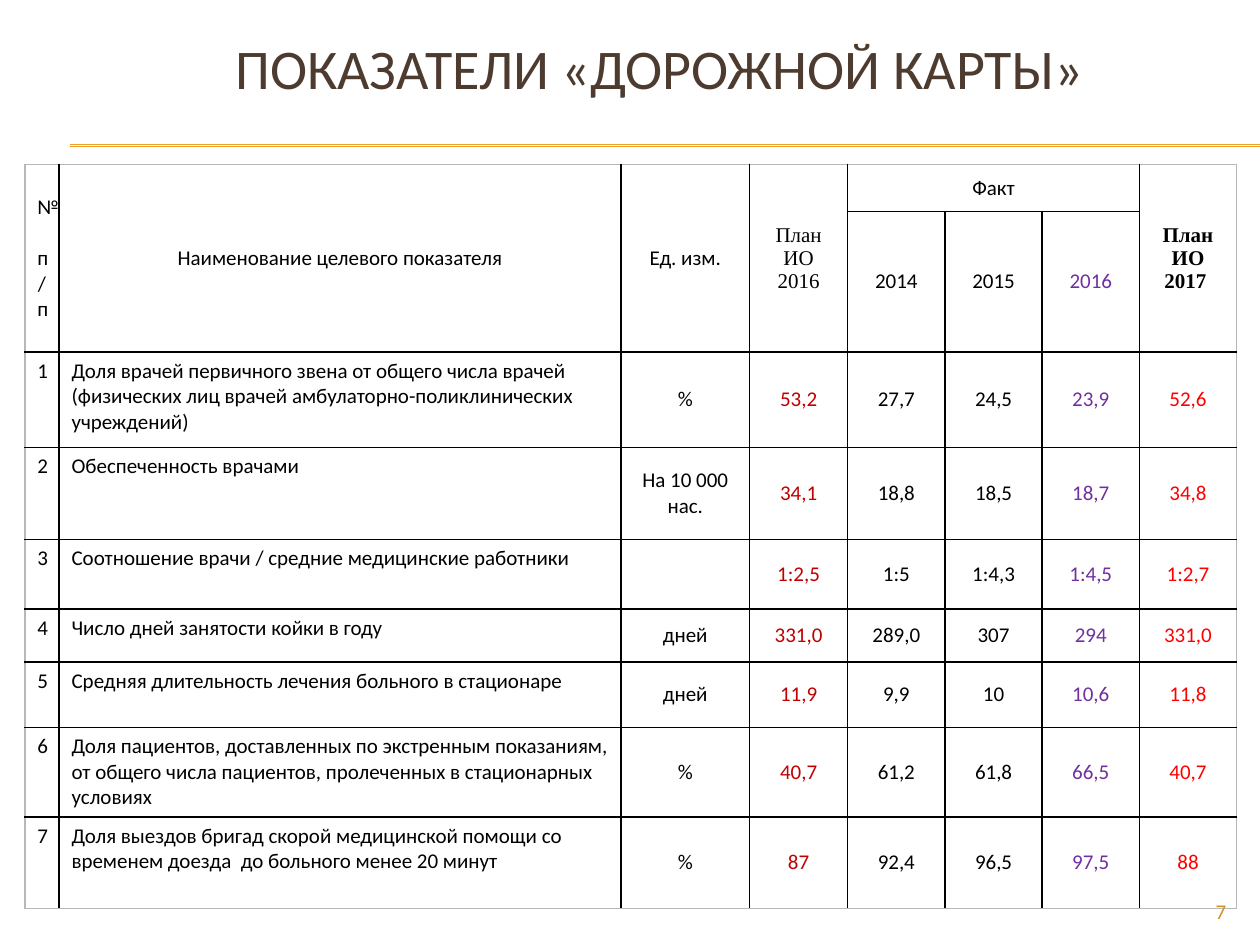
"""Builds the slide with the road map indicators table."""
import pptx
import pptx.util
import pptx.dml.color
import pptx.enum.shapes
import pptx.enum.text
import pptx.oxml
import pptx.oxml.ns
from lxml import etree

Cm, Pt = pptx.util.Cm, pptx.util.Pt
ALIGN, ANCHOR = pptx.enum.text.PP_ALIGN, pptx.enum.text.MSO_ANCHOR

COLORS = {
    "title": "4E3B30", "rule": "F0A22E", "number": "D48F29", "text": "000000",
    "plan": "C00000", "current": "7030A0", "next": "FF0000", "frame": "B8B8B8",
}
TITLE = "ПОКАЗАТЕЛИ «ДОРОЖНОЙ КАРТЫ»"
PAGE = "7"
HEADINGS = [
    ["№ п/п", "Наименование целевого показателя", "Ед. изм.", "План ИО 2016",
     "Факт", "", "", "План ИО 2017 "],
    ["", "", "", "", "2014", "2015", "2016", ""],
]
INDICATORS = [
    ["Доля врачей первичного звена от общего числа врачей (физических лиц врачей "
     "амбулаторно-поликлинических учреждений)",
     "%", "53,2", "27,7", "24,5", "23,9", "52,6"],
    ["Обеспеченность врачами", "На 10 000 нас.", "34,1", "18,8", "18,5", "18,7", "34,8"],
    ["Соотношение врачи / средние медицинские работники",
     "", "1:2,5", "1:5", "1:4,3", "1:4,5", "1:2,7"],
    ["Число дней занятости койки в году", "дней", "331,0", "289,0", "307", "294", "331,0"],
    ["Средняя длительность лечения больного в стационаре",
     "дней", "11,9", "9,9", "10", "10,6", "11,8"],
    ["Доля пациентов, доставленных по экстренным показаниям, от общего числа "
     "пациентов, пролеченных в стационарных условиях",
     "%", "40,7", "61,2", "61,8", "66,5", "40,7"],
    ["Доля выездов бригад скорой медицинской помощи со временем доезда  до больного "
     "менее 20 минут", "%", "87", "92,4", "96,5", "97,5", "88"],
]
WIDTHS = [0.69, 11.33, 2.59, 1.98] + [1.96] * 4
HEIGHTS = [0.94, 1.55, 1.93, 1.85, 1.4, 1.07, 1.32, 1.6, 1.85]
MERGES = [((0, col), (1, col)) for col in (0, 1, 2, 3, 7)] + [((0, 4), (0, 6))]
NUMBER, NAME, PLAN, CURRENT, NEXT = 0, 1, 3, 6, 7
VALUE_COLORS = {PLAN: "plan", CURRENT: "current", NEXT: "next"}


def rgb(name):
    return pptx.dml.color.RGBColor.from_string(COLORS[name])


def write(frame, text, size, color, align, font="Calibri", bold=False):
    frame.word_wrap = True
    paragraph = frame.paragraphs[0]
    paragraph.text = text
    paragraph.alignment = align
    paragraph.font.size = Pt(size)
    paragraph.font.name = font
    paragraph.font.bold = bold
    paragraph.font.color.rgb = rgb(color)


def set_borders(cell, outer):
    properties = cell._tc.get_or_add_tcPr()
    for position, side in enumerate(("lnL", "lnR", "lnT", "lnB")):
        color = COLORS["frame" if side in outer else "text"]
        properties.insert(position, pptx.oxml.parse_xml(
            f'<a:{side} {pptx.oxml.ns.nsdecls("a")} w="12700"><a:solidFill>'
            f'<a:srgbClr val="{color}"/></a:solidFill></a:{side}>'))


def add_rule(slide, left, right, top):
    rule = slide.shapes.add_connector(
        pptx.enum.shapes.MSO_CONNECTOR.STRAIGHT, Cm(left), Cm(top), Cm(right), Cm(top))
    rule.line.color.rgb = rgb("rule")
    rule.line.width = Pt(0.75)
    etree.SubElement(rule._element.spPr, pptx.oxml.ns.qn("a:effectLst"))


def add_indicators(slide):
    rows = HEADINGS + [[str(n), *row] for n, row in enumerate(INDICATORS, 1)]
    table = slide.shapes.add_table(
        len(rows), len(WIDTHS), Cm(0.5), Cm(3.32), Cm(sum(WIDTHS)), Cm(sum(HEIGHTS))).table
    table.first_row = table.horz_banding = False
    for column, width in zip(table.columns, WIDTHS):
        column.width = Cm(width)
    for row, height in zip(table.rows, HEIGHTS):
        row.height = Cm(height)
    for start, end in MERGES:
        table.cell(*start).merge(table.cell(*end))
    for r, texts in enumerate(rows):
        heading = r < len(HEADINGS)
        for c, text in enumerate(texts):
            cell = table.cell(r, c)
            cell.fill.background()
            edges = {"lnL": c == 0, "lnR": c == len(WIDTHS) - 1,
                     "lnT": r == 0, "lnB": r == len(rows) - 1}
            set_borders(cell, [side for side, on_edge in edges.items() if on_edge])
            top = not heading and c in (NUMBER, NAME)
            cell.vertical_anchor = ANCHOR.TOP if top else ANCHOR.MIDDLE
            plain = heading and c != CURRENT
            write(cell.text_frame, text, 12,
                  "text" if plain else VALUE_COLORS.get(c, "text"),
                  ALIGN.LEFT if top and c == NAME else ALIGN.CENTER,
                  "Times New Roman" if heading and c in (PLAN, NEXT) else "Calibri",
                  heading and c == NEXT)


def main():
    deck = pptx.Presentation()
    deck.slide_width, deck.slide_height = Cm(25.4), Cm(19.05)
    slide = deck.slides.add_slide(deck.slide_layouts[5])
    for top in (2.92, 2.95):
        add_rule(slide, 1.42, 25.4, top)
    add_indicators(slide)
    title = slide.shapes.title
    title.left, title.top, title.width, title.height = Cm(2.5), Cm(0.08), Cm(21.6), Cm(2.54)
    title.text_frame.vertical_anchor = ANCHOR.MIDDLE
    write(title.text_frame, TITLE, 32, "title", ALIGN.CENTER)
    page = slide.shapes.add_textbox(Cm(22.86), Cm(17.98), Cm(2.11), Cm(0.69))
    write(page.text_frame, PAGE, 12, "number", ALIGN.RIGHT)
    deck.save("out.pptx")


if __name__ == "__main__":
    main()
